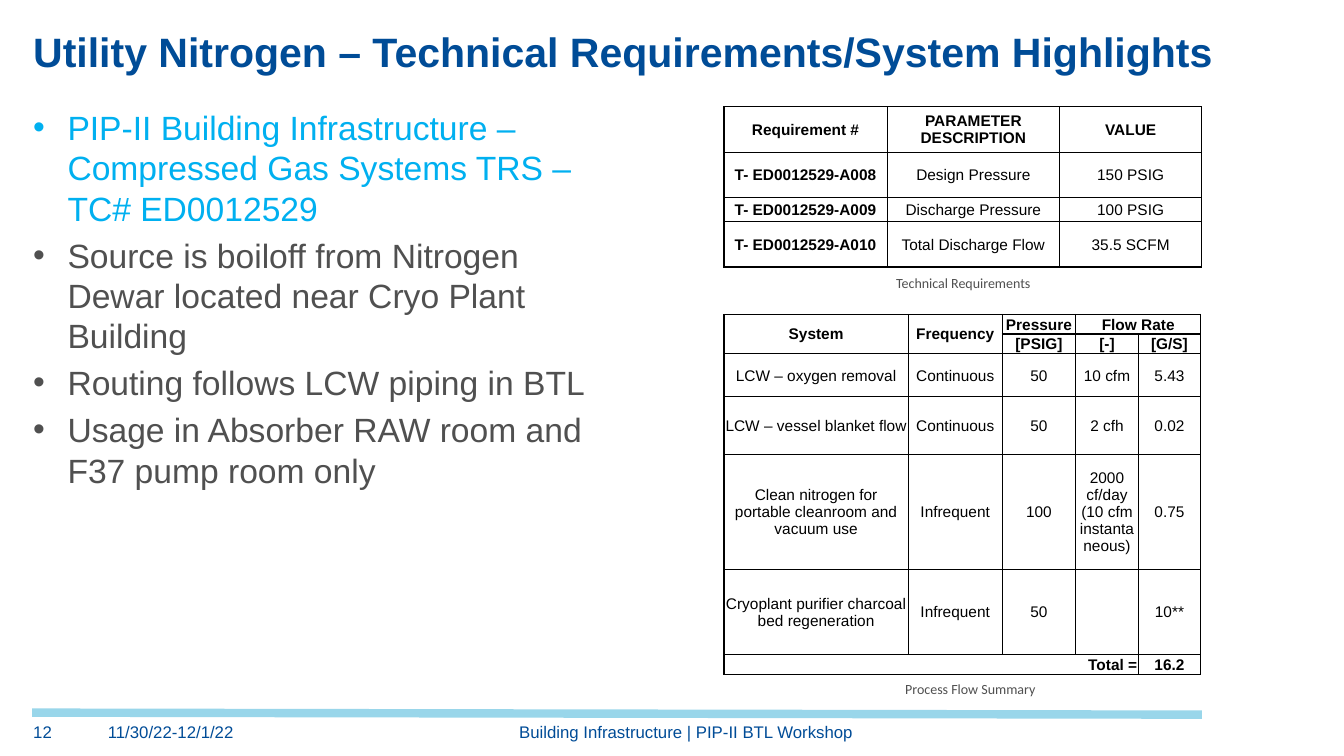
from lxml import etree
from pptx import Presentation
from pptx.dml.color import RGBColor
from pptx.enum.shapes import MSO_CONNECTOR
from pptx.enum.text import MSO_ANCHOR, PP_ALIGN
from pptx.oxml.ns import qn
from pptx.util import Inches, Pt

LEFT, CENTER, RIGHT = PP_ALIGN.LEFT, PP_ALIGN.CENTER, PP_ALIGN.RIGHT
TOP, MIDDLE, BOTTOM = MSO_ANCHOR.TOP, MSO_ANCHOR.MIDDLE, MSO_ANCHOR.BOTTOM
STRAIGHT = MSO_CONNECTOR.STRAIGHT

COLORS = {"navy": "004C97", "cyan": "00B0F0", "gray": "505050",
          "black": "000000", "rule": "99D6EA"}

TITLE = "Utility Nitrogen – Technical Requirements/System Highlights"
HIGHLIGHTS = [
    ("PIP-II Building Infrastructure – Compressed Gas Systems TRS – TC# ED0012529", "cyan"),
    ("Source is boiloff from Nitrogen Dewar located near Cryo Plant Building", "gray"),
    ("Routing follows LCW piping in BTL", "gray"),
    ("Usage in Absorber RAW room and F37 pump room only", "gray"),
]
FOOTERS = [
    ("11/30/22-12/1/22", (1.07, 7.16, 1.47, 0.31), LEFT),
    ("Building Infrastructure | PIP-II BTL Workshop", (2.24, 7.16, 9.13, 0.27), CENTER),
    ("12", (0.33, 7.16, 0.6, 0.26), LEFT),
]
CAPTIONS = [
    ("Process Flow Summary", (8.88, 6.7, 1.51, 0.27)),
    ("Technical Requirements", (8.79, 2.67, 1.57, 0.27)),
]
REQUIREMENTS = {
    "top": 1.06,
    "columns": [1.62, 1.71, 1.41],
    "heights": [0.45, 0.45, 0.24, 0.45],
    "rows": [
        ["Requirement #", "PARAMETER DESCRIPTION", "VALUE"],
        ["T- ED0012529-A008", "Design Pressure", "150 PSIG"],
        ["T- ED0012529-A009", "Discharge Pressure", "100 PSIG"],
        ["T- ED0012529-A010", "Total Discharge Flow", "35.5 SCFM"],
    ],
    "merges": [],
    "bold_rows": {0},
    "bold_columns": {0},
}
FLOWS = {
    "top": 3.12,
    "columns": [1.83, 0.93, 0.73, 0.62, 0.62],
    "heights": [0.15, 0.15, 0.43, 0.57, 1.14, 0.85, 0.15],
    "rows": [
        ["System", "Frequency", "Pressure", "Flow Rate", ""],
        ["", "", "[PSIG]", "[-]", "[G/S]"],
        ["LCW – oxygen removal", "Continuous", "50", "10 cfm", "5.43"],
        ["LCW – vessel blanket flow", "Continuous", "50", "2 cfh", "0.02"],
        ["Clean nitrogen for portable cleanroom and vacuum use", "Infrequent", "100",
         "2000 cf/day (10 cfm instantaneous)", "0.75"],
        ["Cryoplant purifier charcoal bed regeneration", "Infrequent", "50", "", "10**"],
        ["Total =", "", "", "", "16.2"],
    ],
    "merges": [((0, 0), (1, 0)), ((0, 1), (1, 1)), ((0, 3), (0, 4)), ((6, 0), (6, 3))],
    "bold_rows": {0, 1, 6},
    "bold_columns": set(),
}
TABLE_LEFT = 7.18
BULLET_INDENT = 0.34


def write(paragraph, text, size=12, color="navy", font="Arial", bold=False, align=LEFT):
    paragraph.alignment = align
    run = paragraph.add_run()
    run.text = text
    run.font.size = Pt(size)
    run.font.name = font
    run.font.bold = bold
    run.font.color.rgb = RGBColor.from_string(COLORS[color])


def add_frame(place, anchor=TOP, wrap=True, inset=True):
    frame = slide.shapes.add_textbox(*map(Inches, place)).text_frame
    frame.word_wrap = wrap
    frame.vertical_anchor = anchor
    if not inset:
        frame.margin_left = frame.margin_right = 0
        frame.margin_top = frame.margin_bottom = 0
    return frame


def add_bullet(paragraph):
    properties = paragraph._p.get_or_add_pPr()
    properties.set("marL", str(Inches(BULLET_INDENT)))
    properties.set("indent", str(-Inches(BULLET_INDENT)))
    etree.SubElement(properties, qn("a:buFont")).set("typeface", "Arial")
    etree.SubElement(properties, qn("a:buChar")).set("char", "•")


def add_borders(cell):
    properties = cell._tc.get_or_add_tcPr()
    for position, side in enumerate(("lnL", "lnR", "lnT", "lnB")):
        border = etree.Element(qn(f"a:{side}"), w=str(Pt(1)))
        fill = etree.SubElement(border, qn("a:solidFill"))
        etree.SubElement(fill, qn("a:srgbClr")).set("val", COLORS["black"])
        properties.insert(position, border)


def add_grid(content):
    columns, heights = content["columns"], content["heights"]
    place = (TABLE_LEFT, content["top"], sum(columns), sum(heights))
    table = slide.shapes.add_table(len(heights), len(columns), *map(Inches, place)).table
    table.first_row = table.horz_banding = False
    for column, width in zip(table.columns, columns):
        column.width = Inches(width)
    for row, height in zip(table.rows, heights):
        row.height = Inches(height)
    for r, texts in enumerate(content["rows"]):
        for c, text in enumerate(texts):
            cell = table.cell(r, c)
            cell.fill.background()
            cell.vertical_anchor = MIDDLE
            cell.margin_left = cell.margin_right = cell.margin_top = Inches(0.01)
            cell.margin_bottom = 0
            add_borders(cell)
            paragraph = cell.text_frame.paragraphs[0]
            paragraph.font.size = Pt(11)
            if text:
                bold = r in content["bold_rows"] or c in content["bold_columns"]
                write(paragraph, text, size=11, color="black", bold=bold,
                      align=RIGHT if text == "Total =" else CENTER)
    for first, last in content["merges"]:
        table.cell(*first).merge(table.cell(*last))


deck = Presentation()
deck.slide_width, deck.slide_height = Inches(13.33), Inches(7.5)
slide = deck.slides.add_slide(deck.slide_layouts[6])

footer_rule = slide.shapes.add_connector(STRAIGHT, *map(Inches, (0.32, 7.07, 11.92, 7.09)))
footer_rule.line.color.rgb = RGBColor.from_string(COLORS["rule"])
footer_rule.line.width = Pt(6)
etree.SubElement(footer_rule._element.spPr, qn("a:effectLst"))

highlights = add_frame((0.33, 1.06, 5.86, 5.53), inset=False)
for index, (text, color) in enumerate(HIGHLIGHTS):
    paragraph = highlights.add_paragraph() if index else highlights.paragraphs[0]
    add_bullet(paragraph)
    if index:
        paragraph.space_before = Pt(4.8)
    write(paragraph, text, size=24, color=color)

title = add_frame((0.33, 0.28, 12.67, 0.47), anchor=BOTTOM, inset=False)
write(title.paragraphs[0], TITLE, size=29.3, bold=True)

for text, place, align in FOOTERS:
    write(add_frame(place, inset=False).paragraphs[0], text, align=align)

add_grid(REQUIREMENTS)
add_grid(FLOWS)

for text, place in CAPTIONS:
    write(add_frame(place, wrap=False).paragraphs[0], text, size=10, color="gray", font="Calibri")

deck.save("out.pptx")
